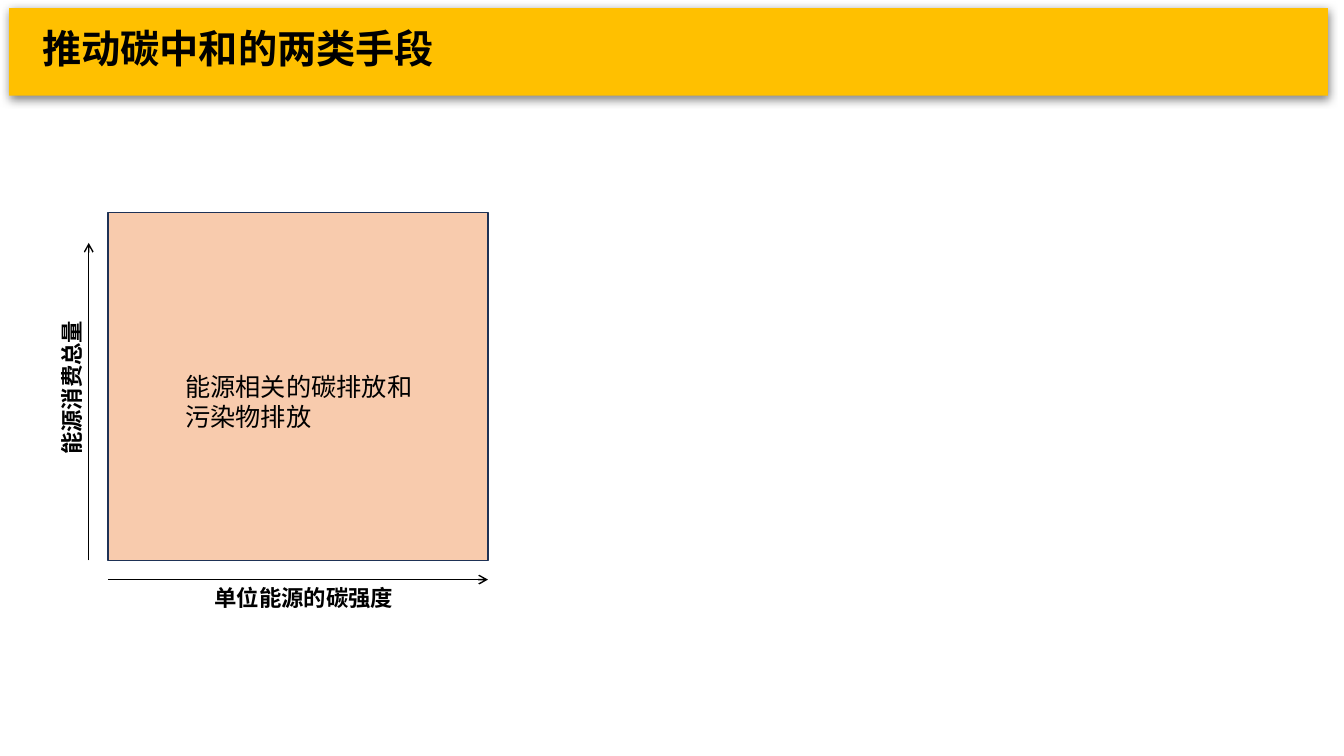
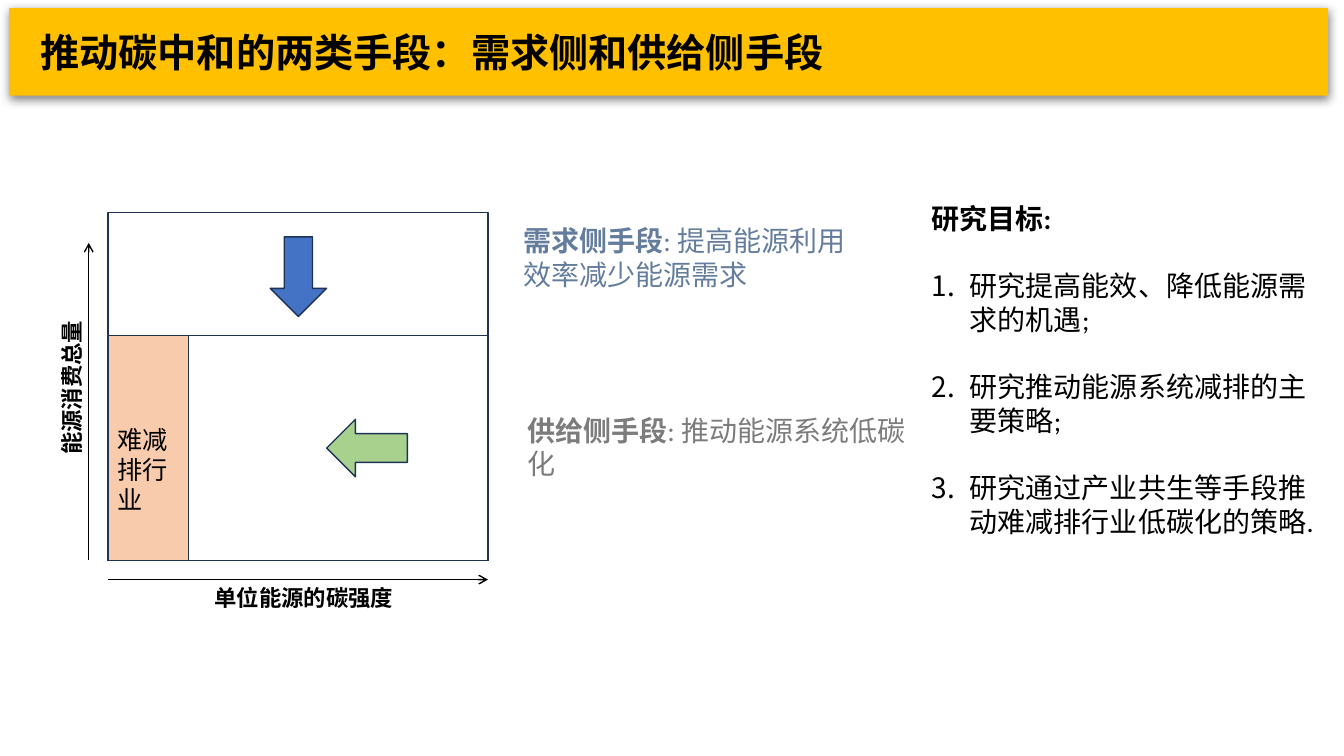
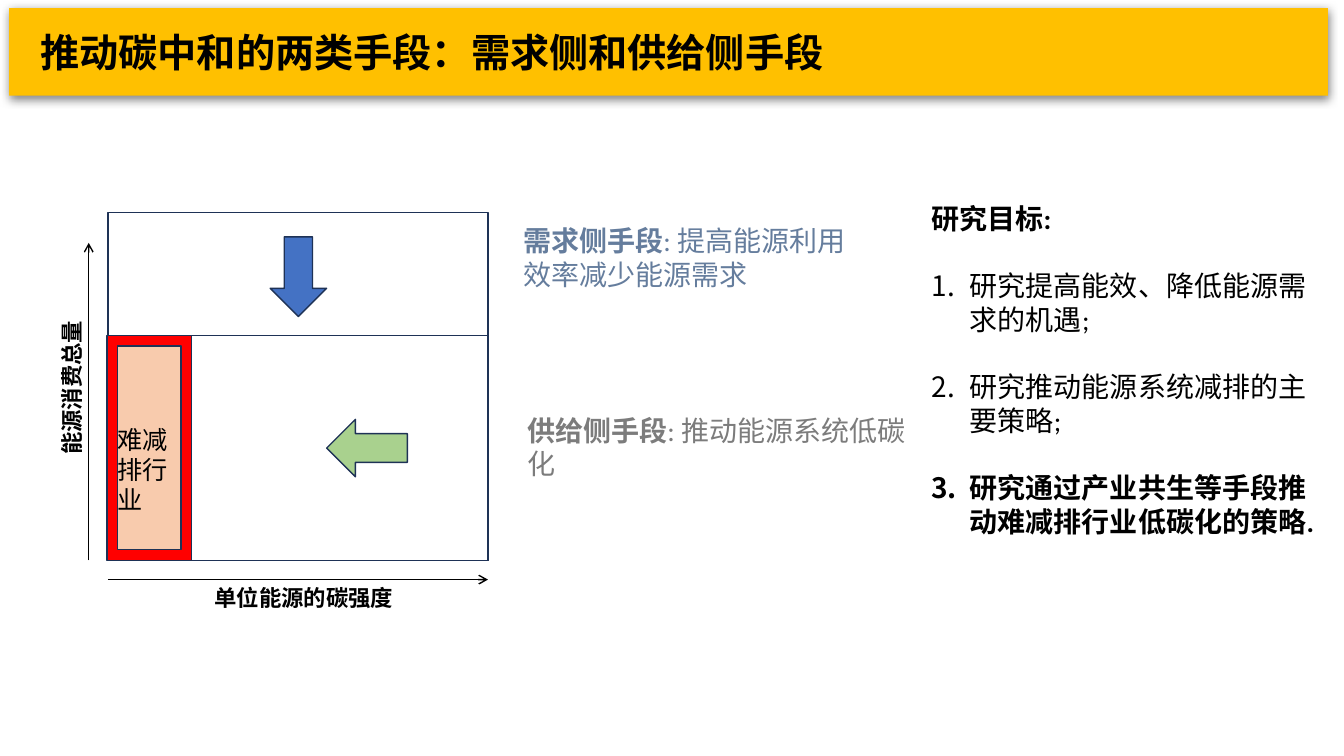
from lxml import etree
from pptx import Presentation
from pptx.dml.color import RGBColor
from pptx.enum.shapes import MSO_CONNECTOR, MSO_SHAPE
from pptx.enum.text import MSO_ANCHOR, MSO_AUTO_SIZE, PP_ALIGN
from pptx.oxml.ns import qn
from pptx.util import Pt

RECT, FRAME = MSO_SHAPE.RECTANGLE, MSO_SHAPE.FRAME
RIGHT, DOWN = MSO_SHAPE.RIGHT_ARROW, MSO_SHAPE.DOWN_ARROW
STRAIGHT = MSO_CONNECTOR.STRAIGHT
TOP, LEFT = MSO_ANCHOR.TOP, PP_ALIGN.LEFT
GROW = MSO_AUTO_SIZE.SHAPE_TO_FIT_TEXT

PX = 9144  # 100 px to the inch
FONT = "Calibri"
COLORS = {"band": "FFC000", "edge": "1E3256", "ink": "000000", "white": "FFFFFF",
          "peach": "F8CBAD", "green": "A9D18E", "blue": "4472C4", "red": "FF0000",
          "slate": "657D9D", "gray": "7C7C7C"}

# Text formats
HEAD = {"size": Pt(28), "bold": True}
AXIS = {"size": Pt(16), "bold": True}
NOTE = {"size": Pt(18), "bold": False}
BODY = {"size": Pt(20), "bold": False}
LEAD = {"size": Pt(20), "bold": True}

# Chart square, split into a demand row and a hard-to-abate column
X, Y, W, H = 107, 211, 377, 345
CUT, SIDE, GAP = 122, 80, 19
BASE = Y + H
LOW = (X, Y + CUT, W, H - CUT)
HARD = (X, Y + CUT, SIDE, H - CUT)

# Content: (box, rotation, text, format)
AXES = [((-6, 365, 155, 37), 270, "能源消费总量", AXIS),
        ((203, 575, 200, 37), 0, "单位能源的碳强度", AXIS)]
LINES = [(X - GAP, BASE, X - GAP, 241), (X, BASE + GAP, X + W, BASE + GAP)]
TOTAL = ((174, 363, 259, 71), "能源相关的碳排放和污染物排放")
SECTOR = ((X, 416, SIDE, 101), "难减排行业")
MEANS = [((509, 217, 367, 77), "slate", "需求侧手段", ": 提高能源利用效率减少能源需求"),
         ((513, 405, 405, 77), "gray", "供给侧手段", ": 推动能源系统低碳化")]
GOALS = ["研究提高能效、降低能源需求的机遇;",
         "研究推动能源系统减排的主要策略;",
         "研究通过产业共生等手段推动难减排行业低碳化的策略."]
PARTS = [(RECT, (X, Y, W, H), "white", 0),
         (RECT, LOW, "white", 0),
         (RECT, HARD, "peach", 0),
         (RIGHT, (324, 416, 80, 57), "green", 180),
         (DOWN, (268, 235, 56, 79), "blue", 0)]
SPLIT = "推动碳中和的两类手段：需求侧和供给侧手段"
SLIDES = [{"title": "推动碳中和的两类手段", "at": (32, 19, 1014, 57), "split": False},
          {"title": SPLIT, "at": (30, 23, 1014, 57), "split": True, "focus": False},
          {"title": SPLIT, "at": (30, 23, 1014, 57), "split": True, "focus": True}]


def emu(nums):
    return [n * PX for n in nums]


def rgb(name):
    return RGBColor.from_string(COLORS[name])


def add_run(para, text, form, color="ink"):
    run = para.add_run()
    run.text = text
    for key, val in {"name": FONT, **form}.items():
        setattr(run.font, key, val)
    run.font.color.rgb = rgb(color)


def add_box(slide, box, wrap=True):
    item = slide.shapes.add_textbox(*emu(box))
    item.text_frame.word_wrap = wrap
    item.text_frame.auto_size = GROW
    return item


def add_part(slide, kind, box, fill, turn=0, edge="edge"):
    item = slide.shapes.add_shape(kind, *emu(box))
    item.rotation = turn
    item.fill.solid()
    item.fill.fore_color.rgb = rgb(fill)
    if edge:
        item.line.color.rgb = rgb(edge)
        item.line.width = Pt(1)
    else:
        item.line.fill.background()
    item.shadow.inherit = False
    return item


def add_band(slide):
    """Draw the title band and hand it to the shared layout."""
    band = add_part(slide, RECT, (9, 8, 1308, 87), "band", edge=None)._element
    shade = etree.SubElement(band.spPr.find(qn("a:effectLst")), qn("a:outerShdw"),
                             blurRad=str(Pt(7)), dist=str(Pt(2)), dir="5400000",
                             algn="t", rotWithShape="0")
    tone = etree.SubElement(shade, qn("a:srgbClr"), val=COLORS["ink"])
    etree.SubElement(tone, qn("a:alpha"), val="50000")
    slide.slide_layout.shapes._spTree.insert(2, band)


def add_title(slide, text, box):
    title = slide.shapes.title
    title.left, title.top, title.width, title.height = emu(box)
    frame = title.text_frame
    for key, val in {"vertical_anchor": TOP, "word_wrap": True, "auto_size": GROW}.items():
        setattr(frame, key, val)
    frame.paragraphs[0].alignment = LEFT
    add_run(frame.paragraphs[0], text, HEAD)


def add_axes(slide):
    for box, turn, text, form in AXES:
        item = add_box(slide, box, wrap=False)
        item.rotation = turn
        add_run(item.text_frame.paragraphs[0], text, form)
    for ends in LINES:
        line = slide.shapes.add_connector(STRAIGHT, *emu(ends))
        line.line.color.rgb = rgb("ink")
        line.line.width = Pt(1)
        etree.SubElement(line.line._get_or_add_ln(), qn("a:tailEnd"), type="arrow")
        etree.SubElement(line._element.spPr, qn("a:effectLst"))


def add_note(slide, box, text):
    add_run(add_box(slide, box).text_frame.paragraphs[0], text, NOTE)


def add_goals(slide, focus):
    frame = add_box(slide, (914, 195, 413, 347)).text_frame
    add_run(frame.paragraphs[0], "研究目标:", LEAD)
    for goal in GOALS:
        para = frame.add_paragraph()
        props = para._p.get_or_add_pPr()
        props.set("marL", str(38 * PX))
        props.set("indent", str(-38 * PX))
        etree.SubElement(props, qn("a:buFont"), typeface="+mj-lt")
        etree.SubElement(props, qn("a:buAutoNum"), type="arabicPeriod")
        para.space_before = Pt(24)
        add_run(para, goal, LEAD if focus and goal == GOALS[-1] else BODY)


def add_split(slide, focus):
    for part in PARTS:
        add_part(slide, *part)
    add_goals(slide, focus)
    add_note(slide, *SECTOR)
    for box, color, name, text in MEANS:
        para = add_box(slide, box).text_frame.paragraphs[0]
        add_run(para, name, LEAD, color)
        add_run(para, text, BODY, color)
    if focus:
        add_part(slide, FRAME, (X - 1, Y + CUT, SIDE + 4, H - CUT), "red")


def main():
    deck = Presentation()
    deck.slide_width, deck.slide_height = emu((1333, 750))
    layout = deck.slide_layouts.get_by_name("Title Only")
    for page in SLIDES:
        slide = deck.slides.add_slide(layout)
        if len(deck.slides) == 1:
            add_band(slide)
        add_title(slide, page["title"], page["at"])
        if page["split"]:
            add_split(slide, page["focus"])
        else:
            add_part(slide, RECT, (X, Y, W, H), "peach")
            add_note(slide, *TOTAL)
        add_axes(slide)
    deck.save("out.pptx")


if __name__ == "__main__":
    main()
